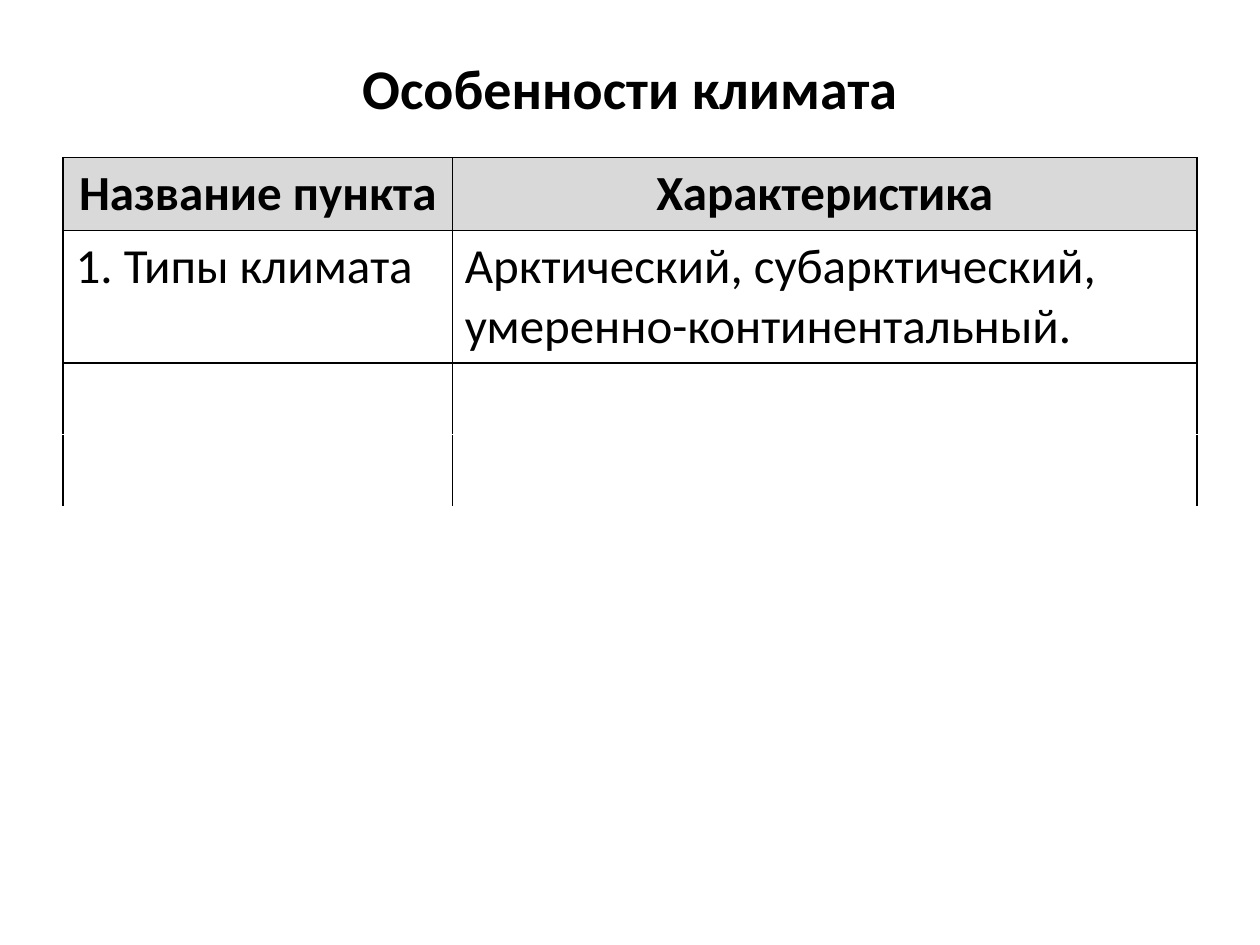
from lxml import etree
from pptx import Presentation
from pptx.dml.color import RGBColor
from pptx.enum.text import MSO_ANCHOR, PP_ALIGN
from pptx.oxml.ns import qn
from pptx.util import Inches, Pt

CENTER, LEFT = PP_ALIGN.CENTER, PP_ALIGN.LEFT
MIDDLE = MSO_ANCHOR.MIDDLE
BLACK = RGBColor(0x00, 0x00, 0x00)
WHITE = RGBColor(0xFF, 0xFF, 0xFF)
HEADER_GRAY = RGBColor(0xD9, 0xD9, 0xD9)
FONT = "Calibri"
TITLE_ONLY = 5

SLIDE_WIDTH, SLIDE_HEIGHT = Inches(10), Inches(7.5)
MARGIN = int(SLIDE_WIDTH * 0.05)
CONTENT_WIDTH = SLIDE_WIDTH - 2 * MARGIN
TITLE_BOX = (MARGIN, int(SLIDE_HEIGHT * 0.04), CONTENT_WIDTH, Inches(0.79))
TABLE_BOX = (MARGIN, SLIDE_HEIGHT // 6, CONTENT_WIDTH, Inches(2.77))
COLUMN_WIDTHS = (3.09, 5.91)
ROW_HEIGHTS = (0.58, 1.05, 0.57, 0.57)
CLIMATE_ROWS = (
    ("Название пункта", "Характеристика"),
    ("1. Типы климата", "Арктический, субарктический, умеренно-континентальный."),
    ("", ""),
    ("", ""),
)
RULE_COLORS = (BLACK, BLACK, BLACK, WHITE, WHITE)


def format_text(text_frame, size, bold, alignment):
    for paragraph in text_frame.paragraphs:
        paragraph.alignment = alignment
        for run in paragraph.runs:
            run.font.name = FONT
            run.font.size = Pt(size)
            run.font.bold = bold
            run.font.color.rgb = BLACK


def set_borders(cell, top, bottom):
    properties = cell._tc.get_or_add_tcPr()
    sides = (("a:lnL", BLACK), ("a:lnR", BLACK), ("a:lnT", top), ("a:lnB", bottom))
    for tag, color in sides:
        line = etree.SubElement(properties, qn(tag), w=str(Pt(1)))
        fill = etree.SubElement(line, qn("a:solidFill"))
        etree.SubElement(fill, qn("a:srgbClr"), val=str(color))


def add_title(slide, box):
    title = slide.shapes.title
    title.left, title.top, title.width, title.height = box
    title.text_frame.text = "Особенности климата"
    title.text_frame.vertical_anchor = MIDDLE
    format_text(title.text_frame, 32, True, CENTER)


def add_climate_table(slide, box):
    table = slide.shapes.add_table(len(ROW_HEIGHTS), len(COLUMN_WIDTHS), *box).table
    table.first_row = False
    table.horz_banding = False
    for column, width in zip(table.columns, COLUMN_WIDTHS):
        column.width = Inches(width)
    for index, (row, height) in enumerate(zip(table.rows, ROW_HEIGHTS)):
        row.height = Inches(height)
        is_header = index == 0
        for cell, text in zip(row.cells, CLIMATE_ROWS[index]):
            set_borders(cell, RULE_COLORS[index], RULE_COLORS[index + 1])
            if is_header:
                cell.fill.solid()
                cell.fill.fore_color.rgb = HEADER_GRAY
            else:
                cell.fill.background()
            if text:
                cell.text_frame.text = text
                format_text(cell.text_frame, 28, is_header, CENTER if is_header else LEFT)


def main():
    presentation = Presentation()
    presentation.slide_width, presentation.slide_height = SLIDE_WIDTH, SLIDE_HEIGHT
    slide = presentation.slides.add_slide(presentation.slide_layouts[TITLE_ONLY])
    add_title(slide, TITLE_BOX)
    add_climate_table(slide, TABLE_BOX)
    presentation.save("out.pptx")


if __name__ == "__main__":
    main()
